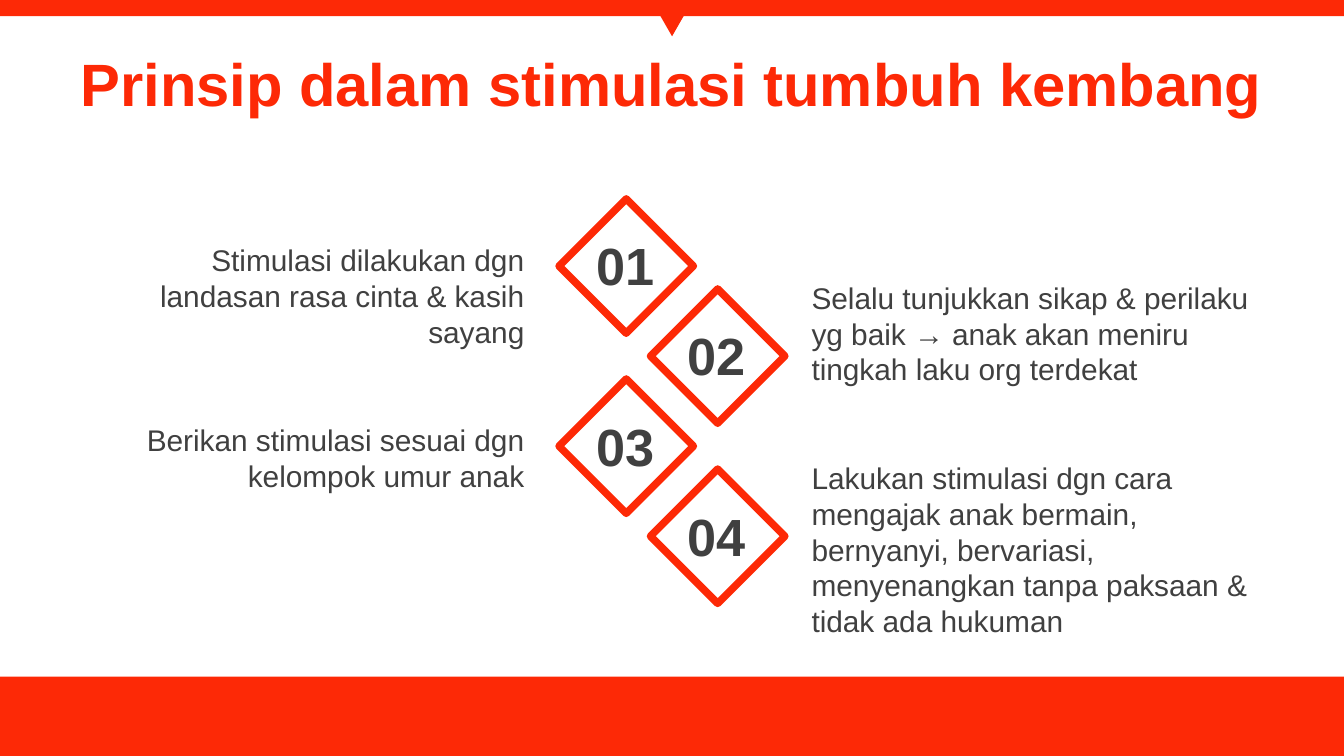
from lxml import etree
from pptx import Presentation
from pptx.dml.color import RGBColor
from pptx.enum import shapes, text
from pptx.oxml.ns import qn
from pptx.util import Inches, Pt

RED = RGBColor(0xFD, 0x29, 0x06)
GRAY = RGBColor(0x40, 0x40, 0x40)
WHITE = RGBColor(0xFF, 0xFF, 0xFF)
SHAPE = shapes.MSO_SHAPE
ALIGN = text.PP_ALIGN
WIDTH = 10
HEIGHT = WIDTH * 9 / 16

PRINCIPLES = [
    ("Stimulasi dilakukan dgn landasan rasa cinta & kasih sayang", 0.91),
    ("Selalu tunjukkan sikap & perilaku yg baik → anak akan meniru "
     "tingkah laku org terdekat", 0.91),
    ("Berikan stimulasi sesuai dgn kelompok umur anak", 0.64),
    ("Lakukan stimulasi dgn cara mengajak anak bermain, bernyanyi, "
     "bervariasi, menyenangkan tanpa paksaan & tidak ada hukuman", 1.45),
]


def place(left, top, width, height):
    """Return a box given in inches as lengths."""
    return [Inches(value) for value in (left, top, width, height)]


def write(frame, words, size, color, align, bold=False):
    """Fill a text frame with one formatted paragraph."""
    frame.text = words
    para = frame.paragraphs[0]
    para.alignment = align
    font = para.runs[0].font
    font.name, font.size, font.bold = "Arial", Pt(size), bold
    font.color.rgb = color


def add_solid(page, kind, box):
    """Add a plain red shape."""
    shape = page.shapes.add_shape(kind, *place(*box))
    shape.shadow.inherit = False
    shape.fill.solid()
    shape.fill.fore_color.rgb = RED
    shape.line.fill.background()
    return shape


def add_frame(page, box):
    """Draw the top bar with its pointer and the bottom band."""
    left, top, width, height = box
    add_solid(page, SHAPE.RECTANGLE, (left, top + height - 0.59, width, 0.59))
    add_solid(page, SHAPE.RECTANGLE, (left, top, width, 0.12))
    pointer = add_solid(page, SHAPE.ISOSCELES_TRIANGLE,
                        (left + (width - 0.31) / 2, top, 0.31, 0.27))
    pointer.rotation = 180


def add_title(page, box, words):
    """Place and format the title placeholder."""
    title = page.shapes.title
    title.left, title.top, title.width, title.height = place(*box)
    frame = title.text_frame
    frame.vertical_anchor = text.MSO_ANCHOR.MIDDLE
    frame.auto_size = text.MSO_AUTO_SIZE.NONE
    write(frame, words, 32, RED, ALIGN.CENTER, bold=True)


def add_diamond(page, box, number):
    """Draw an outlined diamond with its number inside."""
    left, top, width, height = box
    diamond = page.shapes.add_shape(SHAPE.DIAMOND, *place(*box))
    diamond.shadow.inherit = False
    diamond.fill.background()
    diamond.line.color.rgb = RED
    diamond.line.width = Pt(4)
    outline = diamond.line.fill._xPr
    etree.SubElement(outline, qn("a:round"))
    label = page.shapes.add_textbox(
        *place(left + 0.18, top + 0.21, width - 0.36, 0.57))
    label.text_frame.word_wrap = False
    write(label.text_frame, f"{number:02d}", 28, GRAY, ALIGN.LEFT, bold=True)


def add_principles(page, box):
    """Stagger the numbered diamonds with their texts on alternate sides."""
    left, top, width, height = box
    step = (height - 1.32) / 3
    for index, (words, text_height) in enumerate(PRINCIPLES):
        on_right = index % 2 == 1
        row = top + step * index
        add_diamond(page, (left + 3.42 + 0.68 * on_right, row, 1, 1), index + 1)
        if on_right:
            spot = (left + width - 3.46, row - 0.12, 3.46, text_height)
        else:
            spot = (left, row + 0.27, 3.26, text_height)
        frame = page.shapes.add_textbox(*place(*spot)).text_frame
        frame.word_wrap = True
        write(frame, words, 16, GRAY, ALIGN.LEFT if on_right else ALIGN.RIGHT)


def main():
    """Build and save the slide."""
    deck = Presentation()
    deck.slide_width, deck.slide_height = Inches(WIDTH), Inches(HEIGHT)
    page = deck.slides.add_slide(deck.slide_layouts[5])
    page.background.fill.solid()
    page.background.fill.fore_color.rgb = WHITE
    add_frame(page, (0, 0, WIDTH, HEIGHT))
    add_title(page, (0, 0.13, WIDTH, 0.97),
              "Prinsip dalam stimulasi tumbuh kembang")
    add_principles(page, (0.74, 1.48, 8.66, 3.33))
    deck.save("out.pptx")


if __name__ == "__main__":
    main()
